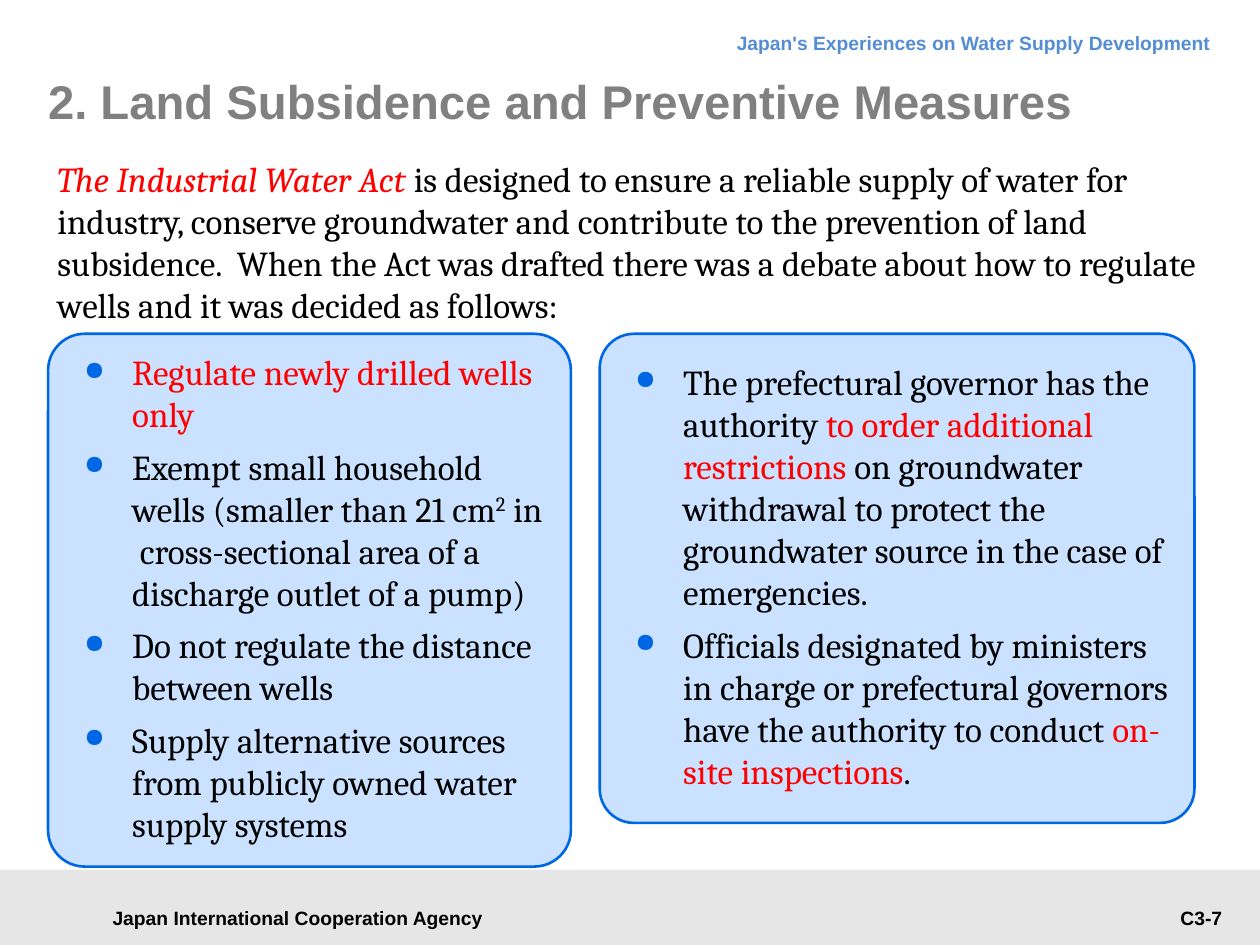
"""Build the slide on land subsidence and preventive measures."""
from lxml import etree
from pptx import Presentation
from pptx.dml.color import RGBColor
from pptx.enum.shapes import MSO_SHAPE
from pptx.enum.text import MSO_ANCHOR, PP_ALIGN
from pptx.oxml.ns import qn
from pptx.util import Cm, Pt

RECT, ROUND = MSO_SHAPE.RECTANGLE, MSO_SHAPE.ROUNDED_RECTANGLE
TOP, MIDDLE = MSO_ANCHOR.TOP, MSO_ANCHOR.MIDDLE
LEFT, CENTER, RIGHT = PP_ALIGN.LEFT, PP_ALIGN.CENTER, PP_ALIGN.RIGHT

THEME = {
    "footer": "E6E6E6", "panel": "CAE2FF", "accent": "0067E4",
    "label": {"name": "Arial", "size": Pt(11), "bold": True, "color": "000000"},
    "header": {"name": "Arial", "size": Pt(11), "bold": True, "color": "548DD4"},
    "title": {"name": "Arial", "size": Pt(27), "bold": True, "color": "808080"},
    "body": {"name": "Cambria", "size": Pt(20), "color": "000000"},
    "red": {"name": "Cambria", "size": Pt(20), "color": "FF0000"},
    "act": {"name": "Cambria", "size": Pt(20), "italic": True, "color": "FF0000"},
}


def add_runs(p, runs):
    """Add (text, style) runs to a paragraph."""
    for text, style in runs:
        r = p.add_run()
        r.text = text
        for key, value in THEME[style.removesuffix("^")].items():
            if key == "color":
                r.font.color.rgb = RGBColor.from_string(value)
            else:
                setattr(r.font, key, value)
        if style.endswith("^"):
            r.font._element.set("baseline", "30000")


def add_bullet(p):
    """Give a paragraph a hanging accent-coloured bullet."""
    pPr = p._p.get_or_add_pPr()
    pPr.set("marL", str(Cm(0.97)))
    pPr.set("indent", str(-Cm(0.97)))
    color = etree.SubElement(pPr, qn("a:buClr"))
    etree.SubElement(color, qn("a:srgbClr"), val=THEME["accent"])
    etree.SubElement(pPr, qn("a:buSzPct"), val="75000")
    etree.SubElement(pPr, qn("a:buChar"), char="●")


prs = Presentation()
prs.slide_width, prs.slide_height = Cm(25.4), Cm(19.05)
s = prs.slides.add_slide(prs.slide_layouts[6])

footer = s.shapes.add_shape(RECT, 0, Cm(17.53), Cm(25.4), Cm(1.52))
footer.shadow.inherit = False
footer.fill.solid()
footer.fill.fore_color.rgb = RGBColor.from_string(THEME["footer"])
footer.line.fill.background()

INSETS = (0.25, 0.13, 0.25, 0.13)
TEXTS = [
    ((1.8, 18.08, 8.41, 0.86), MIDDLE, CENTER, None, INSETS,
     [("Japan International Cooperation Agency", "label")]),
    ((6.91, 0.33, 17.75, 0.97), TOP, RIGHT, Pt(18), INSETS,
     [("Japan's Experiences on Water Supply Development", "header")]),
    ((20.9, 18.14, 3.99, 0.74), TOP, RIGHT, None, INSETS, [("C3-7", "label")]),
    ((0.91, 3.05, 24.05, 3.68), TOP, LEFT, None, INSETS,
     [("The Industrial Water Act ", "act"),
      ("is designed to ensure a reliable supply of water for industry, conserve "
       "groundwater and contribute to the prevention of land subsidence.  When the "
       "Act was drafted there was a debate about how to regulate wells and it was "
       "decided as follows:", "body")]),
    ((0.97, 1.02, 24.1, 2.01), MIDDLE, LEFT, None, (0, 0, 0, 0),
     [("2. Land Subsidence and Preventive Measures", "title")]),
]
SIDES = ("margin_left", "margin_top", "margin_right", "margin_bottom")
for box, anchor, align, spacing, insets, runs in TEXTS:
    tf = s.shapes.add_textbox(*map(Cm, box)).text_frame
    tf.word_wrap, tf.vertical_anchor = True, anchor
    for side, inset in zip(SIDES, insets):
        setattr(tf, side, Cm(inset))
    p = tf.paragraphs[0]
    p.alignment, p.line_spacing = align, spacing
    add_runs(p, runs)

PANELS = [
    ((12.09, 6.73, 11.99, 9.86), [
        [("The prefectural governor has the authority ", "body"),
         ("to order additional restrictions ", "red"),
         ("on groundwater withdrawal to protect the groundwater source in the case "
          "of emergencies.", "body")],
        [("Officials designated by ministers in charge or prefectural governors have "
          "the authority to conduct ", "body"),
         ("on-site inspections", "red"), (".", "body")],
    ]),
    ((0.97, 6.73, 10.54, 10.74), [
        [("Regulate newly drilled wells only", "red")],
        [("Exempt small household wells (smaller than 21 cm", "body"),
         ("2", "body^"),
         (" in  cross-sectional area of a discharge outlet of a pump)", "body")],
        [("Do not regulate the distance between wells", "body")],
        [("Supply alternative sources from publicly owned water supply systems",
          "body")],
    ]),
]
for box, points in PANELS:
    sp = s.shapes.add_shape(ROUND, *map(Cm, box))
    sp.adjustments[0] = 0.07
    sp.shadow.inherit = False
    sp.fill.solid()
    sp.fill.fore_color.rgb = RGBColor.from_string(THEME["panel"])
    sp.line.color.rgb = RGBColor.from_string(THEME["accent"])
    sp.line.width = Pt(1.5)
    tf = sp.text_frame
    tf.word_wrap, tf.vertical_anchor = True, MIDDLE
    for side, inset in zip(SIDES, (0.51, 0.1, 0.25, 0.2)):
        setattr(tf, side, Cm(inset))
    for i, runs in enumerate(points):
        p = tf.add_paragraph() if i else tf.paragraphs[0]
        add_bullet(p)
        p.alignment, p.space_before = LEFT, Pt(6 if i else 0)
        add_runs(p, runs)

prs.save("out.pptx")
